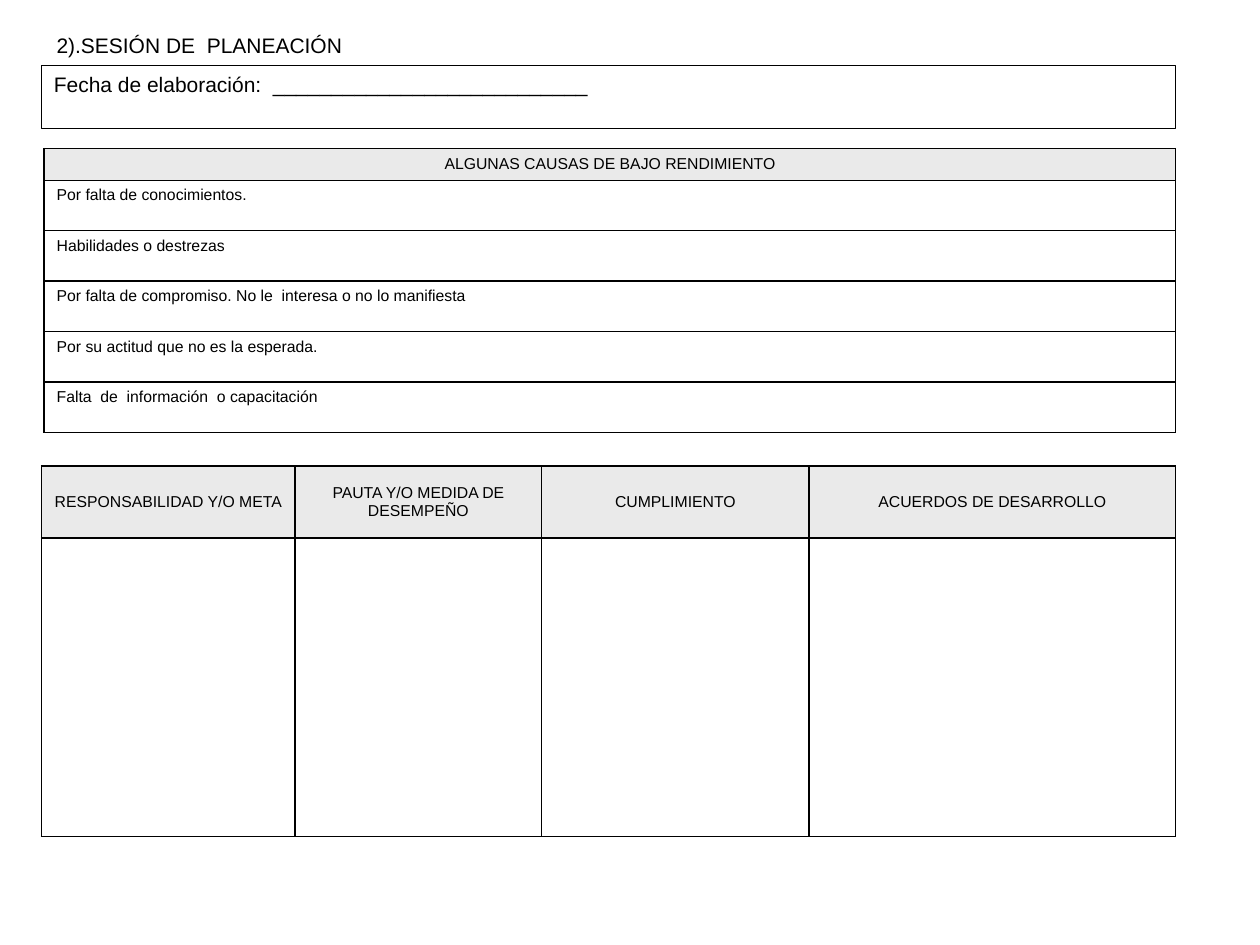
from pptx import Presentation
from pptx.dml.color import RGBColor
from pptx.enum.shapes import MSO_SHAPE as Shape
from pptx.enum.text import MSO_ANCHOR as Anchor, PP_ALIGN as Align
from pptx.oxml import parse_xml
from pptx.oxml.ns import nsdecls
from pptx.util import Inches, Pt

BLACK = RGBColor(0x00, 0x00, 0x00)
HEADER_GRAY = RGBColor(0xEA, 0xEA, 0xEA)

CAUSES = [
    "ALGUNAS CAUSAS DE BAJO RENDIMIENTO",
    "Por falta de conocimientos.",
    "Habilidades o destrezas",
    "Por falta de compromiso. No le  interesa o no lo manifiesta",
    "Por su actitud que no es la esperada.",
    "Falta  de  información  o capacitación",
]
AGREEMENTS = [
    "RESPONSABILIDAD Y/O META",
    "PAUTA Y/O MEDIDA DE DESEMPEÑO",
    "CUMPLIMIENTO",
    "ACUERDOS DE DESARROLLO",
]


def write(frame, text, size, align=Align.LEFT):
    frame.word_wrap = True
    paragraph = frame.paragraphs[0]
    paragraph.text = text
    paragraph.alignment = align
    paragraph.font.name = "Arial"
    paragraph.font.size = Pt(size)
    paragraph.font.color.rgb = BLACK


def add_title(slide, text):
    title = slide.shapes.add_textbox(Inches(0.35), Inches(0.21), Inches(8.98), Inches(0.3))
    write(title.text_frame, text, 12)


def add_date_box(slide, text):
    date_box = slide.shapes.add_shape(
        Shape.RECTANGLE, Inches(0.33), Inches(0.52), Inches(9), Inches(0.5))
    date_box.shadow.inherit = False
    date_box.fill.background()
    date_box.line.color.rgb = BLACK
    date_box.line.width = Pt(0.75)
    date_box.text_frame.vertical_anchor = Anchor.TOP
    write(date_box.text_frame, text, 12)


def add_borders(cell):
    properties = cell._tc.get_or_add_tcPr()
    for position, side in enumerate(("lnL", "lnR", "lnT", "lnB")):
        properties.insert(position, parse_xml(
            f'<a:{side} {nsdecls("a")} w="{Pt(1)}"><a:solidFill>'
            f'<a:srgbClr val="{BLACK}"/></a:solidFill></a:{side}>'))


def add_grid(slide, left, top, widths, heights, rows, header_anchor):
    grid = slide.shapes.add_table(
        len(heights), len(widths), Inches(left), Inches(top),
        Inches(sum(widths)), Inches(sum(heights))).table
    grid.horz_banding = False
    for column, width in zip(grid.columns, widths):
        column.width = Inches(width)
    for index, (row, height, texts) in enumerate(zip(grid.rows, heights, rows)):
        row.height = Inches(height)
        is_header = index == 0
        for cell, text in zip(row.cells, texts):
            if is_header:
                cell.fill.solid()
                cell.fill.fore_color.rgb = HEADER_GRAY
                cell.vertical_anchor = header_anchor
            else:
                cell.fill.background()
            add_borders(cell)
            write(cell.text_frame, text, 9, Align.CENTER if is_header else Align.LEFT)
            for run in cell.text_frame.paragraphs[0].runs:
                run.font.bold = False


def main():
    deck = Presentation()
    deck.slide_width, deck.slide_height = Inches(10), Inches(7.5)
    slide = deck.slides.add_slide(deck.slide_layouts[6])
    add_title(slide, "2).SESIÓN DE  PLANEACIÓN")
    add_date_box(slide, "Fecha de elaboración:  " + "_" * 27)
    add_grid(slide, 0.35, 1.18, [8.98], [0.25] + [0.4] * 5,
             [[cause] for cause in CAUSES], Anchor.TOP)
    add_grid(slide, 0.33, 3.7, [2.01, 1.96, 2.12, 2.91], [0.57, 2.37],
             [AGREEMENTS, [""] * len(AGREEMENTS)], Anchor.MIDDLE)
    deck.save("out.pptx")


if __name__ == "__main__":
    main()
